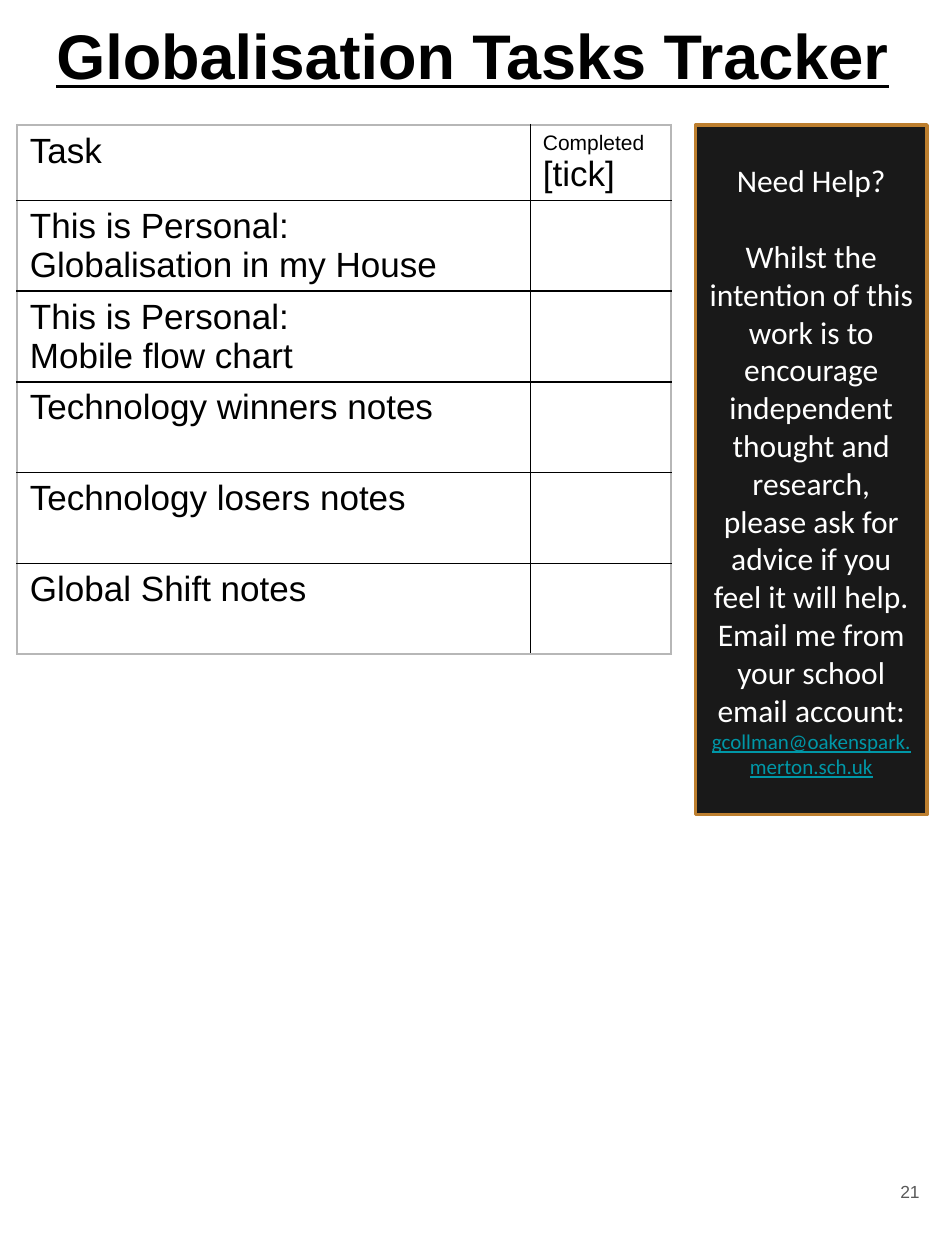
from dataclasses import dataclass

from lxml.etree import SubElement
from pptx import Presentation
from pptx.dml.color import RGBColor
from pptx.enum.shapes import MSO_SHAPE
from pptx.enum.text import MSO_ANCHOR, MSO_AUTO_SIZE, PP_ALIGN
from pptx.oxml.ns import qn
from pptx.util import Cm, Pt


@dataclass(frozen=True)
class Theme:
    ink: str = "000000"
    paper: str = "FFFFFF"
    frame: str = "B7B7B7"
    panel: str = "191919"
    accent: str = "BD7F2F"
    email: str = "0097A7"
    muted: str = "595959"
    sans: str = "Arial"
    humanist: str = "Calibri"
    title_size: int = 36
    task_size: int = 20
    help_size: int = 18
    small_size: int = 12
    page_size: int = 10


THEME = Theme()
TASKS = [
    ["This is Personal:", "Globalisation in my House"],
    ["This is Personal:", "Mobile flow chart"],
    ["Technology winners notes"],
    ["Technology losers notes"],
    ["Global Shift notes"],
]
HELP = [
    "Need Help?",
    "Whilst the intention of this work is to encourage independent thought "
    "and research, please ask for advice if you feel it will help.",
    "Email me from your school email account:",
]
EMAIL = "gcollman@oakenspark.merton.sch.uk"


def color(code):
    return RGBColor.from_string(code)


def write(paragraph, text, size=THEME.task_size, font=THEME.sans, ink=THEME.ink,
          bold=False, underline=False, align=PP_ALIGN.LEFT):
    paragraph.alignment = align
    run = paragraph.add_run()
    run.text = text
    run.font.size = Pt(size)
    run.font.name = font
    run.font.color.rgb = color(ink)
    run.font.bold = bold
    run.font.underline = underline


def next_paragraph(frame, index):
    return frame.add_paragraph() if index else frame.paragraphs[0]


def set_frame(frame, anchor, inset=0.25):
    frame.word_wrap = True
    frame.auto_size = MSO_AUTO_SIZE.NONE
    frame.vertical_anchor = anchor
    frame.margin_left = frame.margin_right = Cm(0.25)
    frame.margin_top = frame.margin_bottom = Cm(inset)


def add_heading(slide):
    heading = slide.shapes.title
    heading.left, heading.top = Cm(0), Cm(0)
    heading.width, heading.height = Cm(19.05), Cm(2.2)
    set_frame(heading.text_frame, MSO_ANCHOR.MIDDLE)
    write(heading.text_frame.paragraphs[0], "Globalisation Tasks Tracker",
          size=THEME.title_size, bold=True, underline=True, align=PP_ALIGN.CENTER)


def set_border(cell, side, code, width):
    edge = SubElement(cell._tc.get_or_add_tcPr(), qn(f"a:ln{side}"), w=str(Pt(width)))
    fill = SubElement(edge, qn("a:solidFill"))
    SubElement(fill, qn("a:srgbClr"), val=code)


def format_cell(cell, outer_sides):
    for side in "LRTB":
        if side in outer_sides:
            set_border(cell, side, THEME.frame, 1.5)
        else:
            set_border(cell, side, THEME.ink, 1)
    cell.fill.solid()
    cell.fill.fore_color.rgb = color(THEME.paper)


def add_tracker(slide):
    row_count = len(TASKS) + 1
    tracker = slide.shapes.add_table(
        row_count, 2, Cm(0.35), Cm(2.52), Cm(13.18), Cm(10.67)).table
    tracker.first_row = tracker.horz_banding = False
    tracker.columns[0].width, tracker.columns[1].width = Cm(10.34), Cm(2.84)
    for index, row in enumerate(tracker.rows):
        row.height = Cm(1.83 if index else 1.52)
        ends = ("" if index else "T") + ("B" if index == row_count - 1 else "")
        for cell, side in zip(row.cells, "LR"):
            format_cell(cell, side + ends)
    for index, lines in enumerate([["Task"], *TASKS]):
        task = tracker.cell(index, 0).text_frame
        for position, line in enumerate(lines):
            write(next_paragraph(task, position), line)
    completed = tracker.cell(0, 1).text_frame.paragraphs[0]
    write(completed, "Completed ", size=THEME.small_size)
    write(completed, "[tick]")


def add_help_panel(slide):
    panel = slide.shapes.add_shape(
        MSO_SHAPE.RECTANGLE, Cm(14.02), Cm(2.52), Cm(4.67), Cm(13.9))
    panel.shadow.inherit = False
    panel.fill.solid()
    panel.fill.fore_color.rgb = color(THEME.panel)
    panel.line.color.rgb = color(THEME.accent)
    panel.line.width = Pt(2)
    advice = panel.text_frame
    set_frame(advice, MSO_ANCHOR.MIDDLE, inset=0.13)
    for index, line in enumerate(HELP):
        write(next_paragraph(advice, index), line, size=THEME.help_size,
              font=THEME.humanist, ink=THEME.paper, align=PP_ALIGN.CENTER)
    advice.paragraphs[0].space_after = Pt(22)
    write(advice.add_paragraph(), EMAIL, size=THEME.small_size, font=THEME.humanist,
          ink=THEME.email, underline=True, align=PP_ALIGN.CENTER)


def add_page_number(slide):
    page = slide.shapes.add_textbox(Cm(17.65), Cm(23.04), Cm(1.14), Cm(1.96)).text_frame
    set_frame(page, MSO_ANCHOR.MIDDLE)
    write(page.paragraphs[0], "21", size=THEME.page_size, ink=THEME.muted,
          align=PP_ALIGN.RIGHT)


def main():
    deck = Presentation()
    deck.slide_width, deck.slide_height = Cm(19.05), Cm(25.4)
    slide = deck.slides.add_slide(deck.slide_layouts.get_by_name("Title Only"))
    add_heading(slide)
    add_tracker(slide)
    add_page_number(slide)
    add_help_panel(slide)
    deck.save("out.pptx")


if __name__ == "__main__":
    main()
